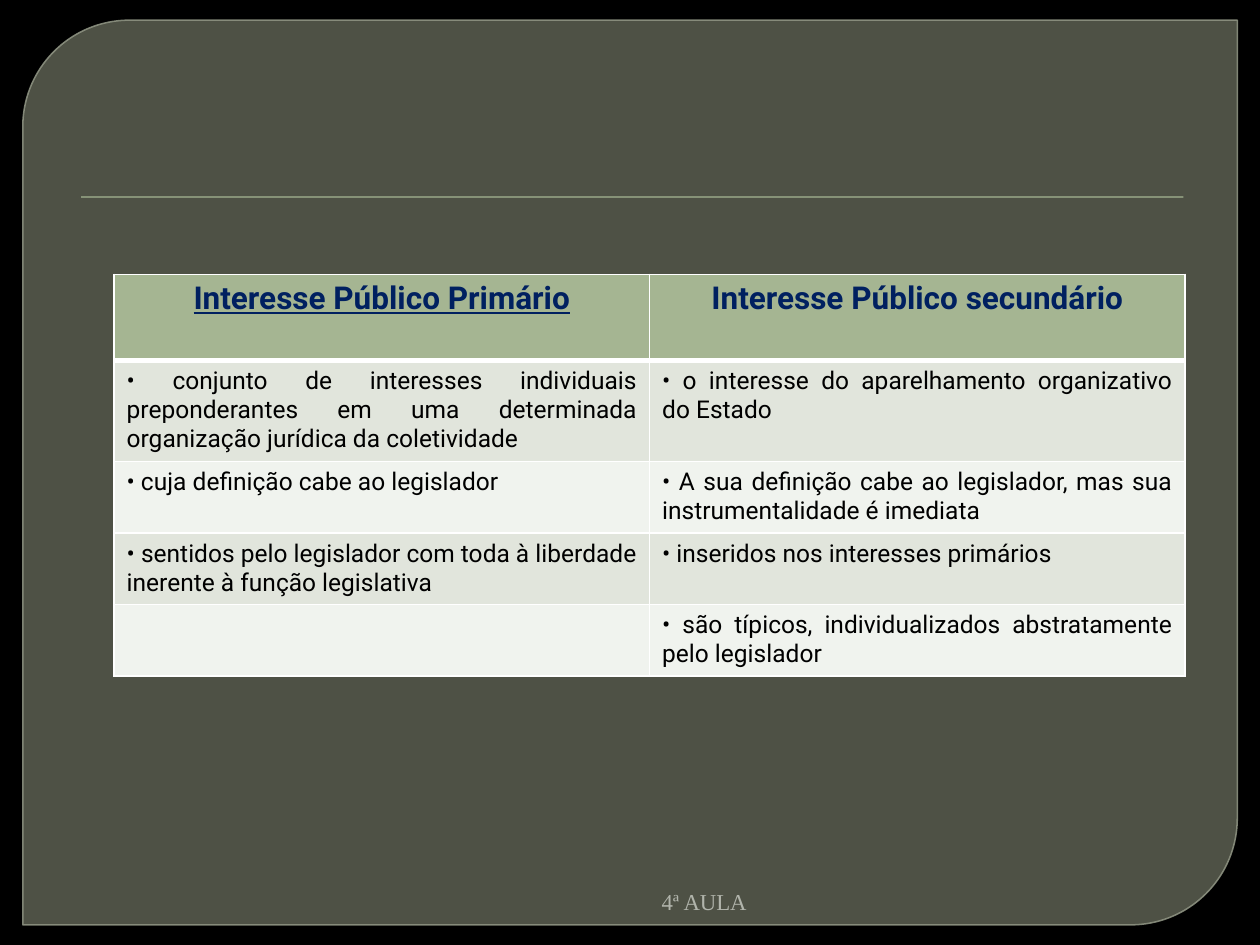
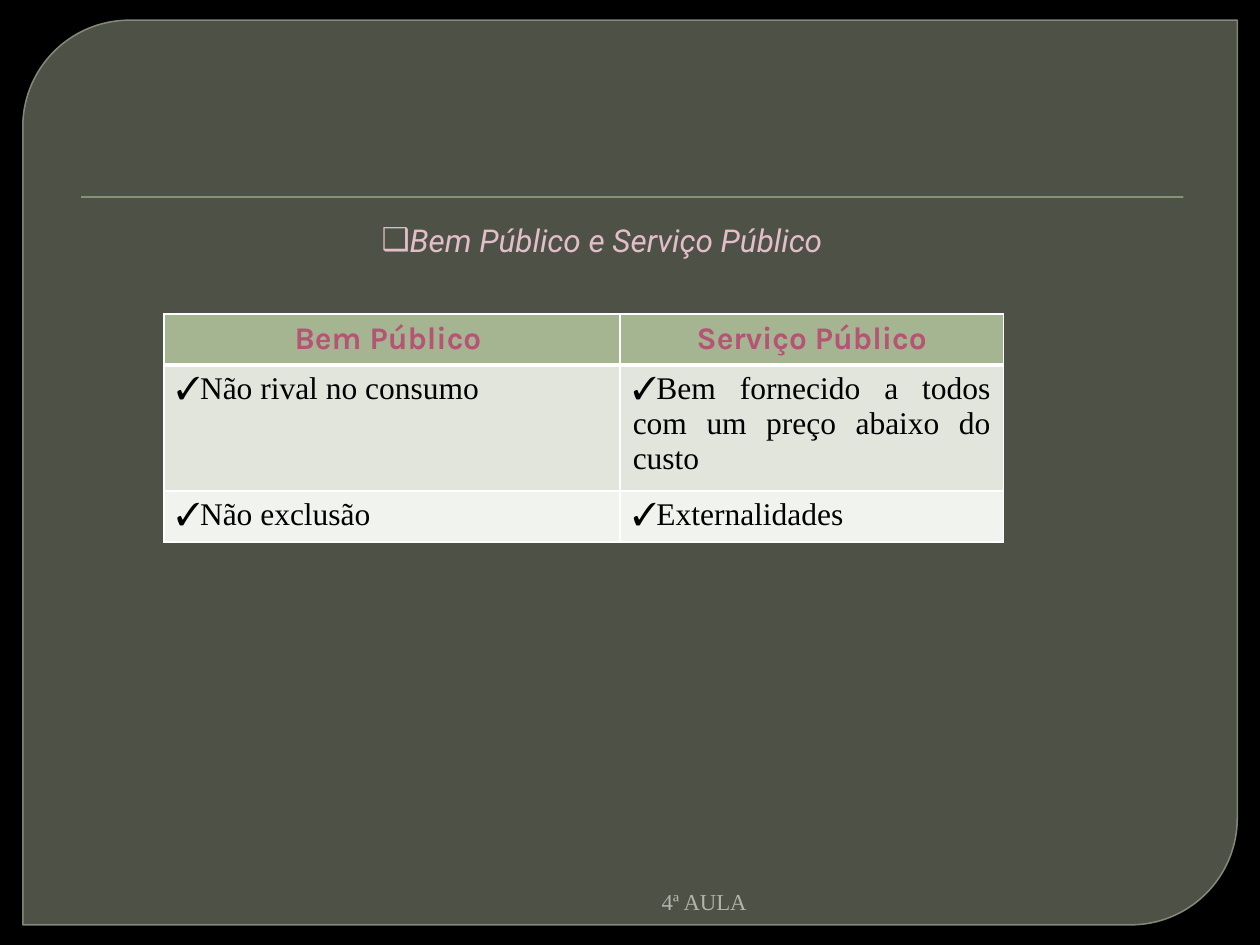
from lxml import etree
from pptx import Presentation
from pptx.dml.color import RGBColor
from pptx.enum.shapes import MSO_SHAPE
from pptx.enum.text import MSO_ANCHOR, MSO_AUTO_SIZE, PP_ALIGN
from pptx.oxml.ns import qn
from pptx.util import Pt

PANEL_FORM = MSO_SHAPE.ROUND_2_DIAG_RECTANGLE
RULE_FORM = MSO_SHAPE.RECTANGLE
CENTER, RIGHT, JUSTIFY = PP_ALIGN.CENTER, PP_ALIGN.RIGHT, PP_ALIGN.JUSTIFY
MIDDLE = MSO_ANCHOR.MIDDLE
GROW = MSO_AUTO_SIZE.SHAPE_TO_FIT_TEXT

BLACK = RGBColor(0x00, 0x00, 0x00)
WHITE = RGBColor(0xFF, 0xFF, 0xFF)
PANEL = RGBColor(0x78, 0x7D, 0x6B)
PANEL_EDGE = RGBColor(0x8F, 0x94, 0x83)
SAGE = RGBColor(0xA5, 0xB5, 0x92)
BAND_DARK = RGBColor(0xE1, 0xE5, 0xDC)
BAND_LIGHT = RGBColor(0xF0, 0xF3, 0xEE)
FOOTER_GRAY = RGBColor(0xB1, 0xB4, 0xAB)
NAVY = RGBColor(0x00, 0x20, 0x60)
ROSE = RGBColor(0xB5, 0x54, 0x75)
PALE_ROSE = RGBColor(0xE3, 0xBE, 0xCA)

SANS, HEADING, SERIF = "Roboto", "Karla", "Times New Roman"


def add_xml(parent, tag, **attributes):
    values = {name: str(value) for name, value in attributes.items()}
    return etree.SubElement(parent, qn(tag), values)


def add_color(parent, color, opacity=100):
    node = add_xml(parent, "a:srgbClr", val=color)
    if opacity < 100:
        add_xml(node, "a:alpha", val=opacity * 1000)


def set_opacity(fill_parent, percent):
    """Make the solid fill directly under fill_parent partly transparent."""
    color = fill_parent.find(qn("a:solidFill")).find(qn("a:srgbClr"))
    add_xml(color, "a:alpha", val=percent * 1000)


def write_text(frame, text, size=18, font=SANS, color=BLACK, align=JUSTIFY,
               bold=False, italic=False, underline=False, bullet=None,
               level=0, indent=0):
    paragraph = frame.paragraphs[0]
    paragraph.alignment = align
    paragraph.level = level
    if bullet:
        properties = paragraph._p.get_or_add_pPr()
        properties.set("marL", str(Pt(indent)))
        properties.set("indent", "0")
        add_xml(properties, "a:buFont", typeface=font)
        add_xml(properties, "a:buChar", char=bullet)
    run = paragraph.add_run()
    run.text = text
    run.font.size = Pt(size)
    run.font.name = font
    run.font.color.rgb = color
    run.font.bold = bold
    run.font.italic = italic
    run.font.underline = underline


def set_borders(cell, top, bottom):
    properties = cell._tc.get_or_add_tcPr()
    for side, width in (("L", 1), ("R", 1), ("T", top), ("B", bottom)):
        border = add_xml(properties, f"a:ln{side}", w=Pt(width))
        add_color(add_xml(border, "a:solidFill"), WHITE)


class Deck:
    """Holds the presentation, its shared style and the current slide."""

    def __init__(self):
        self.presentation = Presentation()
        self.presentation.slide_width = Pt(720)
        self.presentation.slide_height = Pt(540)
        self.slide = None

    def new_slide(self):
        self.slide = self.presentation.slides.add_slide(self.presentation.slide_layouts[6])
        background = self.slide.background.fill
        background.solid()
        background.fore_color.rgb = BLACK
        self.panel()
        self.title_rule()
        self.text("4ª AULA", 102, 504.4, 331.7, 21.6, size=13, font=SERIF,
                  color=FOOTER_GRAY, align=RIGHT)

    def shape(self, form, left, top, width, height, color):
        shape = self.slide.shapes.add_shape(form, Pt(left), Pt(top), Pt(width), Pt(height))
        shape.shadow.inherit = False
        shape.fill.solid()
        shape.fill.fore_color.rgb = color
        shape.line.fill.background()
        return shape

    def panel(self):
        panel = self.shape(PANEL_FORM, 13, 11.5, 694, 517, PANEL)
        panel.adjustments[0] = 0.118
        panel.adjustments[1] = 0
        panel.line.color.rgb = PANEL_EDGE
        panel.line.width = Pt(0.87)
        properties = panel._element.spPr
        set_opacity(properties, 65)
        set_opacity(properties.find(qn("a:ln")), 88)

    def title_rule(self):
        rule = self.shape(RULE_FORM, 46.3, 112.2, 630, 0.72, SAGE)
        effects = rule._element.spPr.find(qn("a:effectLst"))
        shadow = add_xml(effects, "a:outerShdw", blurRad=Pt(1), dist=Pt(1), dir=90 * 60000)
        add_color(shadow, BLACK, opacity=75)

    def text(self, text, left, top, width, height, wrap=True, **style):
        box = self.slide.shapes.add_textbox(Pt(left), Pt(top), Pt(width), Pt(height))
        frame = box.text_frame
        frame.word_wrap = wrap
        frame.vertical_anchor = MIDDLE
        if not wrap:
            frame.auto_size = GROW
        write_text(frame, text, **style)

    def table(self, left, top, widths, heights, headers, rows, body_style):
        """Draw a banded table; headers is a list of (text, style) pairs."""
        frame = self.slide.shapes.add_table(len(heights), len(widths), Pt(left), Pt(top),
                                            Pt(sum(widths)), Pt(sum(heights)))
        table = frame.table
        table.first_row = table.horz_banding = False
        for column, width in zip(table.columns, widths):
            column.width = Pt(width)
        for row, height in zip(table.rows, heights):
            row.height = Pt(height)
        body = [[(text, body_style) for text in row] for row in rows]
        for row_index, entries in enumerate([headers] + body):
            if row_index == 0:
                band = SAGE
            else:
                band = BAND_DARK if row_index % 2 else BAND_LIGHT
            for column_index, (text, style) in enumerate(entries):
                cell = table.cell(row_index, column_index)
                set_borders(cell, top=3 if row_index == 1 else 1,
                            bottom=3 if row_index == 0 else 1)
                cell.fill.solid()
                cell.fill.fore_color.rgb = band
                if text:
                    write_text(cell.text_frame, text, **style)


def add_interests_slide(deck):
    deck.new_slide()
    header = dict(color=NAVY, bold=True, align=CENTER)
    deck.table(
        65.2, 156.8, [306, 306], [49.2, 57, 40.2, 40.2, 40.2],
        headers=[("Interesse Público Primário", dict(header, underline=True)),
                 ("Interesse Público secundário", header)],
        rows=[
            (" conjunto de interesses individuais preponderantes em uma determinada "
             "organização jurídica da coletividade",
             " o interesse do aparelhamento organizativo do Estado"),
            (" cuja definição cabe ao legislador",
             " A sua definição cabe ao legislador, mas sua instrumentalidade é imediata"),
            (" sentidos pelo legislador com toda à liberdade inerente à função legislativa",
             " inseridos nos interesses primários"),
            ("", " são típicos, individualizados abstratamente pelo legislador"),
        ],
        body_style=dict(size=14, bullet="•"))


def add_goods_slide(deck):
    deck.new_slide()
    header = dict(font=HEADING, color=ROSE, bold=True, align=CENTER)
    deck.table(
        93.6, 179.4, [260.8, 219], [29.2, 66.8, 29.2],
        headers=[("Bem Público ", header), ("Serviço Público", header)],
        rows=[
            ("Não rival no consumo", "Bem fornecido a todos com um preço abaixo do custo"),
            ("Não exclusão", "Externalidades"),
        ],
        body_style=dict(font=SERIF, bullet="✓"))
    deck.text("Bem Público e Serviço Público", 139, 122.8, 347, 28.8, wrap=False,
              color=PALE_ROSE, italic=True, bullet="❑", level=2, indent=72)


def main():
    deck = Deck()
    add_interests_slide(deck)
    add_goods_slide(deck)
    deck.presentation.save("out.pptx")


if __name__ == "__main__":
    main()
